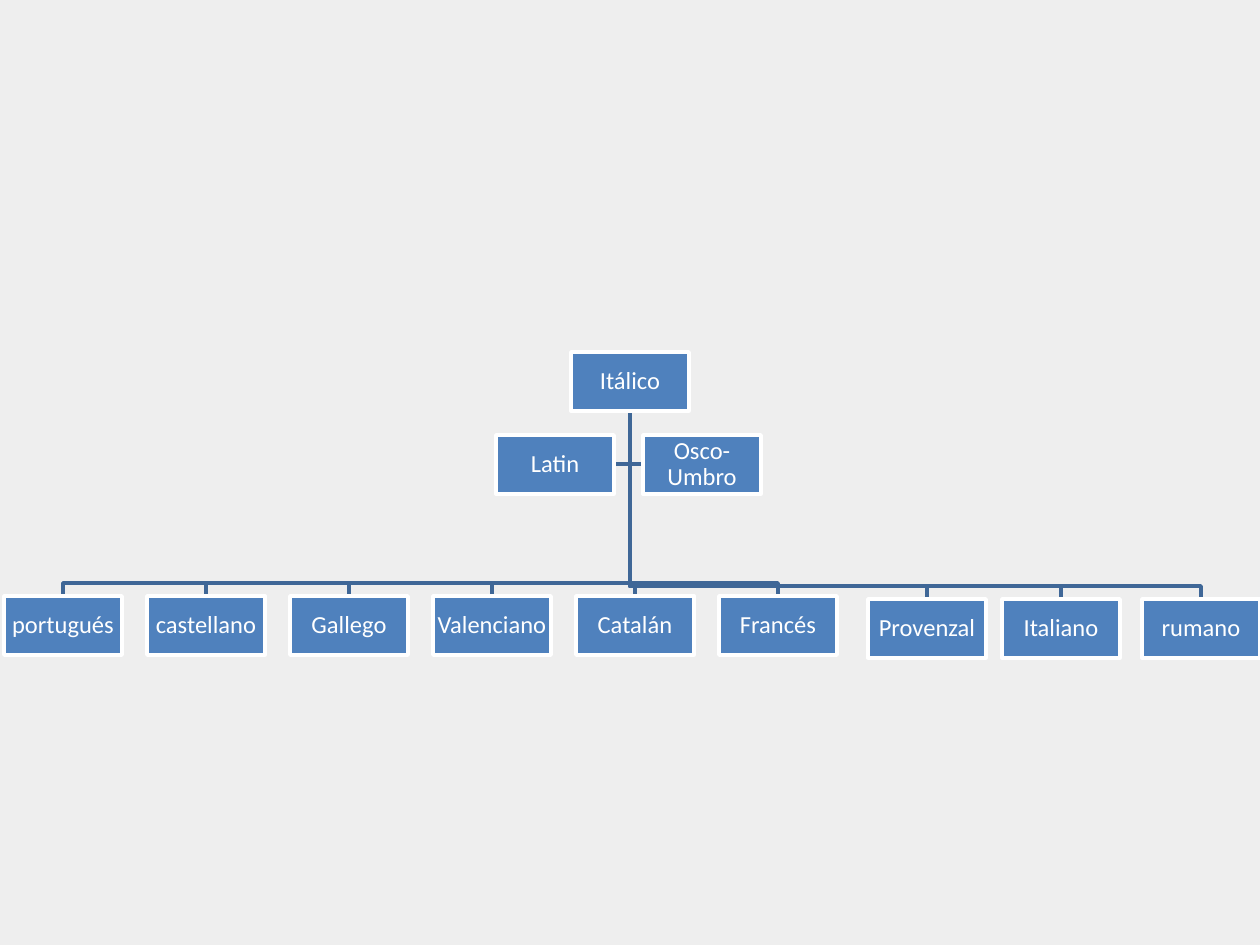
from dataclasses import dataclass

import pptx
import pptx.dml.color
import pptx.enum.shapes
import pptx.enum.text
import pptx.util

PX = 914400 / 126
BOX_WIDTH, BOX_HEIGHT = 118, 59
BUS_GAP = 13


@dataclass(frozen=True)
class Theme:
    background: str = "EEEEEE"
    box: str = "4F81BD"
    branch: str = "3F6797"
    light: str = "FFFFFF"
    font: str = "Calibri"
    text_size: int = 14
    line_width: int = 2


@dataclass(frozen=True)
class Language:
    name: str
    left: int
    top: int

    @property
    def center(self) -> int:
        return self.left + BOX_WIDTH // 2

    @property
    def middle(self) -> int:
        return self.top + BOX_HEIGHT // 2


THEME = Theme()
ROOT = Language("Itálico", 571, 352)
LATIN = Language("Latin", 496, 435)
OSCO_UMBRO = Language("Osco-Umbro", 643, 435)
WESTERN = [
    Language(name, 4 + 143 * index, 596)
    for index, name in enumerate(
        ["portugués", "castellano", "Gallego", "Valenciano", "Catalán", "Francés"]
    )
]
EASTERN = [
    Language(name, left, 599)
    for name, left in [("Provenzal", 868), ("Italiano", 1002), ("rumano", 1142)]
]


def emu(pixels: int) -> int:
    return round(pixels * PX)


def rgb(value: str) -> pptx.dml.color.RGBColor:
    return pptx.dml.color.RGBColor.from_string(value)


def set_values(target, values: dict) -> None:
    for name, value in values.items():
        setattr(target, name, value)


def style_line(shape, color: str) -> None:
    shape.shadow.inherit = False
    shape.line.color.rgb = rgb(color)
    shape.line.width = pptx.util.Pt(THEME.line_width)


def draw_branch(slide, points: list[tuple[int, int]]) -> None:
    start = (ROOT.center, ROOT.top + BOX_HEIGHT)
    builder = slide.shapes.build_freeform(*start, scale=PX)
    builder.add_line_segments(points, close=False)
    shape = builder.convert_to_shape()
    shape.fill.background()
    style_line(shape, THEME.branch)


def draw_child_branch(slide, child: Language) -> None:
    bus = child.top - BUS_GAP
    draw_branch(
        slide, [(ROOT.center, bus), (child.center, bus), (child.center, child.top)]
    )


def draw_side_branch(slide, side: Language, edge: int) -> None:
    draw_branch(slide, [(ROOT.center, side.middle), (edge, side.middle)])


def draw_box(slide, language: Language) -> None:
    shape = slide.shapes.add_shape(
        pptx.enum.shapes.MSO_SHAPE.RECTANGLE,
        emu(language.left), emu(language.top), emu(BOX_WIDTH), emu(BOX_HEIGHT),
    )
    shape.fill.solid()
    shape.fill.fore_color.rgb = rgb(THEME.box)
    style_line(shape, THEME.light)
    frame = shape.text_frame
    margins = {f"margin_{side}": emu(1) for side in ("left", "top", "right", "bottom")}
    set_values(frame, {
        **margins,
        "word_wrap": True,
        "vertical_anchor": pptx.enum.text.MSO_ANCHOR.MIDDLE,
    })
    paragraph = frame.paragraphs[0]
    set_values(paragraph, {
        "text": language.name,
        "alignment": pptx.enum.text.PP_ALIGN.CENTER,
        "line_spacing": 0.9,
        "space_after": pptx.util.Pt(5),
    })
    font = paragraph.runs[0].font
    set_values(font, {"name": THEME.font, "size": pptx.util.Pt(THEME.text_size)})
    font.color.rgb = rgb(THEME.light)


def main() -> None:
    presentation = pptx.Presentation()
    presentation.slide_width = emu(1260)
    presentation.slide_height = emu(945)
    slide = presentation.slides.add_slide(presentation.slide_layouts[6])
    slide.background.fill.solid()
    slide.background.fill.fore_color.rgb = rgb(THEME.background)

    draw_side_branch(slide, OSCO_UMBRO, OSCO_UMBRO.left)
    draw_side_branch(slide, LATIN, LATIN.left + BOX_WIDTH)
    for child in reversed(WESTERN + EASTERN):
        draw_child_branch(slide, child)
    for language in [ROOT, *WESTERN, *EASTERN, LATIN, OSCO_UMBRO]:
        draw_box(slide, language)

    presentation.save("out.pptx")


if __name__ == "__main__":
    main()
